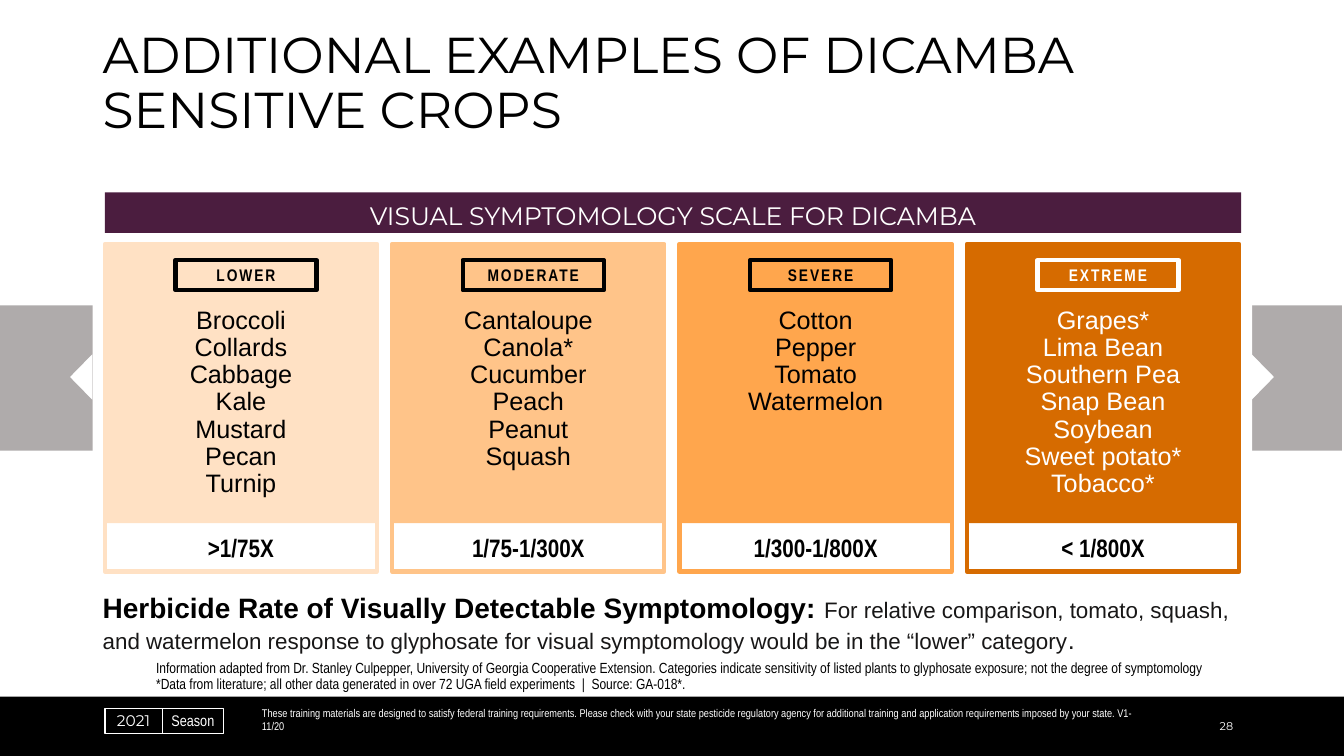
import pptx
import pptx.util
import pptx.dml.color
import pptx.enum.shapes
import pptx.enum.text
import pptx.oxml.ns
import lxml.etree

SHAPE = pptx.enum.shapes.MSO_SHAPE
ALIGN = pptx.enum.text.PP_ALIGN
ANCHOR = pptx.enum.text.MSO_ANCHOR
BLACK, WHITE, INK = "000000", "FFFFFF", "181717"
INSETS = (10, 5, 10, 5)
FOOTER_INSETS = (10, 5, 10, 0)

CATEGORIES = [
    ("LOWER", "FFE1C4", BLACK, ">1/75X",
     ["Broccoli", "Collards", "Cabbage", "Kale", "Mustard", "Pecan", "Turnip"]),
    ("MODERATE", "FFC489", BLACK, "1/75-1/300X",
     ["Cantaloupe", "Canola*", "Cucumber", "Peach", "Peanut", "Squash"]),
    ("SEVERE", "FFA64D", BLACK, "1/300-1/800X",
     ["Cotton", "Pepper", "Tomato", "Watermelon"]),
    ("EXTREME", "D66B00", WHITE, "< 1/800X",
     ["Grapes*", "Lima Bean", "Southern Pea", "Snap Bean", "Soybean",
      "Sweet potato*", "Tobacco*"]),
]


def px(length):
    return pptx.util.Emu(length * 9144)


def color(value):
    return pptx.dml.color.RGBColor.from_string(value)


def style(font, face, size, ink, bold=False):
    font.name = face
    font.size = pptx.util.Pt(size)
    font.bold = bold
    font.color.rgb = color(ink)


def add_block(slide, box, kind=SHAPE.RECTANGLE, fill=None, line=None, weight=3):
    block = slide.shapes.add_shape(kind, *map(px, box))
    block.shadow.inherit = False
    if fill:
        block.fill.solid()
        block.fill.fore_color.rgb = color(fill)
    else:
        block.fill.background()
    if line:
        block.line.color.rgb = color(line)
        block.line.width = pptx.util.Pt(weight)
    else:
        block.line.fill.background()
    return block


def set_frame(frame, insets, anchor):
    frame.word_wrap = True
    frame.vertical_anchor = anchor
    frame.margin_left, frame.margin_top, frame.margin_right, frame.margin_bottom = map(px, insets)


def add_lines(paragraph, text):
    for number, line in enumerate(text.split("\n")):
        if number:
            paragraph.add_line_break()
        run = paragraph.add_run()
        run.text = line
        yield run


def write(holder, texts, face, size, ink, bold=False, align=ALIGN.LEFT,
          anchor=ANCHOR.TOP, insets=INSETS, spacing=1.0, tracking=0):
    frame = holder.text_frame
    set_frame(frame, insets, anchor)
    for number, text in enumerate(texts):
        paragraph = frame.add_paragraph() if number else frame.paragraphs[0]
        paragraph.alignment = align
        paragraph.line_spacing = spacing
        style(paragraph.font, face, size, ink, bold)
        for run in add_lines(paragraph, text):
            if tracking:
                run.font._element.set("spc", str(tracking))


def add_text(slide, box, texts, *args, **options):
    write(slide.shapes.add_textbox(*map(px, box)), texts, *args, **options)


def draw_season(slide, left, top, width, height):
    divider_x = left + 57
    add_block(slide, (left, top, width, height), line=WHITE, weight=1)
    divider = slide.shapes.add_connector(
        pptx.enum.shapes.MSO_CONNECTOR.STRAIGHT,
        px(divider_x), px(top), px(divider_x), px(top + height))
    divider.line.color.rgb = color(WHITE)
    divider.line.width = pptx.util.Pt(1)
    lxml.etree.SubElement(divider._element.spPr, pptx.oxml.ns.qn("a:effectLst"))
    for offset, text_width, text, face, align in (
            (2, 53, "2021", "Montserrat", ALIGN.CENTER),
            (66, 48, "Season", "Arial Narrow", ALIGN.LEFT)):
        add_text(slide, (left + offset, top + 4, text_width, 17), [text], face, 11, WHITE,
                 align=align, anchor=ANCHOR.BOTTOM, insets=(0, 0, 0, 0), spacing=0.9)


def draw_footer(slide, left, top, width, height):
    add_block(slide, (left, top, width, height), fill=BLACK)
    draw_season(slide, left + 104, top + 12, 118, 25)
    add_text(slide, (left + 250, top - 1, 905, 37), [
        "These training materials are designed to satisfy federal training requirements. "
        "Please check with your state pesticide regulatory agency for additional training "
        "and application requirements imposed by your state. V1-11/20"],
        "Arial Narrow", 8, WHITE, anchor=ANCHOR.BOTTOM, insets=FOOTER_INSETS)
    add_text(slide, (left + 1183, top - 1, 50, 37), ["28"], "Montserrat", 8, WHITE,
             align=ALIGN.RIGHT, anchor=ANCHOR.BOTTOM, insets=FOOTER_INSETS)


def draw_side_tabs(slide, left, top, width, height):
    add_block(slide, (left, top, width, height), fill="AFABAB")
    add_block(slide, (left + 92, top - 83, 1150, 357), fill=WHITE)
    for offset, rotation in ((58, 270), (1230, 90)):
        arrow = add_block(slide, (left + offset, top + 60, 45, 22),
                          SHAPE.ISOSCELES_TRIANGLE, fill=WHITE)
        arrow.rotation = rotation


def draw_category(slide, left, top, width, height, category):
    label, shade, ink, rate, crops = category
    add_block(slide, (left, top, width, 277), fill=shade)
    badge = add_block(slide, (left + 70, top + 16, 140, 30), line=ink)
    write(badge, [label], "Arial Narrow", 12, ink, bold=True, align=ALIGN.CENTER,
          anchor=ANCHOR.MIDDLE, tracking=140)
    add_block(slide, (left, top, width, height), line=shade)
    add_text(slide, (left, top + 58, width, 201), crops, "Arial", 18, ink,
             align=ALIGN.CENTER, spacing=0.9)
    add_text(slide, (left, top + 281, width, 40), [rate], "Arial Narrow", 18, BLACK,
             bold=True, align=ALIGN.CENTER)


def draw_scale(slide, left, top, width, height):
    heading = add_block(slide, (left, top, width, 40), fill="4B1D3F")
    write(heading, ["VISUAL SYMPTOMOLOGY SCALE FOR DICAMBA"], "Montserrat", 18, WHITE,
          align=ALIGN.CENTER, anchor=ANCHOR.MIDDLE, insets=(10, 10, 10, 5))
    column_width = 270
    step = (width - column_width) // (len(CATEGORIES) - 1)
    for number, category in enumerate(CATEGORIES):
        draw_category(slide, left + number * step, top + 51, column_width, height - 51, category)


def draw_rate_note(slide, left, top, width, height):
    note = slide.shapes.add_textbox(*map(px, (left, top, width, height)))
    set_frame(note.text_frame, INSETS, ANCHOR.TOP)
    paragraph = note.text_frame.paragraphs[0]
    for text, size, ink, bold in (
            ("Herbicide Rate of Visually Detectable Symptomology: ", 20, BLACK, True),
            ("For relative comparison, tomato, squash, \nand watermelon response to glyphosate "
             "for visual symptomology would be in the “lower” category", 16, INK, False),
            (".", 18, INK, False)):
        for run in add_lines(paragraph, text):
            style(run.font, "Arial", size, ink, bold)


def main():
    deck = pptx.Presentation()
    deck.slide_width, deck.slide_height = px(1333), px(750)
    slide = deck.slides.add_slide(deck.slide_layouts[6])
    draw_footer(slide, 0, 691, 1333, 59)
    draw_side_tabs(slide, 0, 303, 1331, 144)
    draw_scale(slide, 104, 191, 1127, 376)
    draw_rate_note(slide, 92, 581, 1150, 90)
    add_text(slide, (145, 651, 1071, 42), [
        "Information adapted from Dr. Stanley Culpepper, University of Georgia Cooperative "
        "Extension. Categories indicate sensitivity of listed plants to glyphosate exposure; "
        "not the degree of symptomology\n*Data from literature; all other data generated in "
        "over 72 UGA field experiments  |  Source: GA-018*."],
        "Arial Narrow", 10.5, BLACK, spacing=0.9)
    add_text(slide, (92, 25, 1137, 119),
             ["ADDITIONAL EXAMPLES OF DICAMBA\nSENSITIVE CROPS"],
             "Montserrat", 36, BLACK, spacing=0.9)
    deck.save("out.pptx")


if __name__ == "__main__":
    main()
